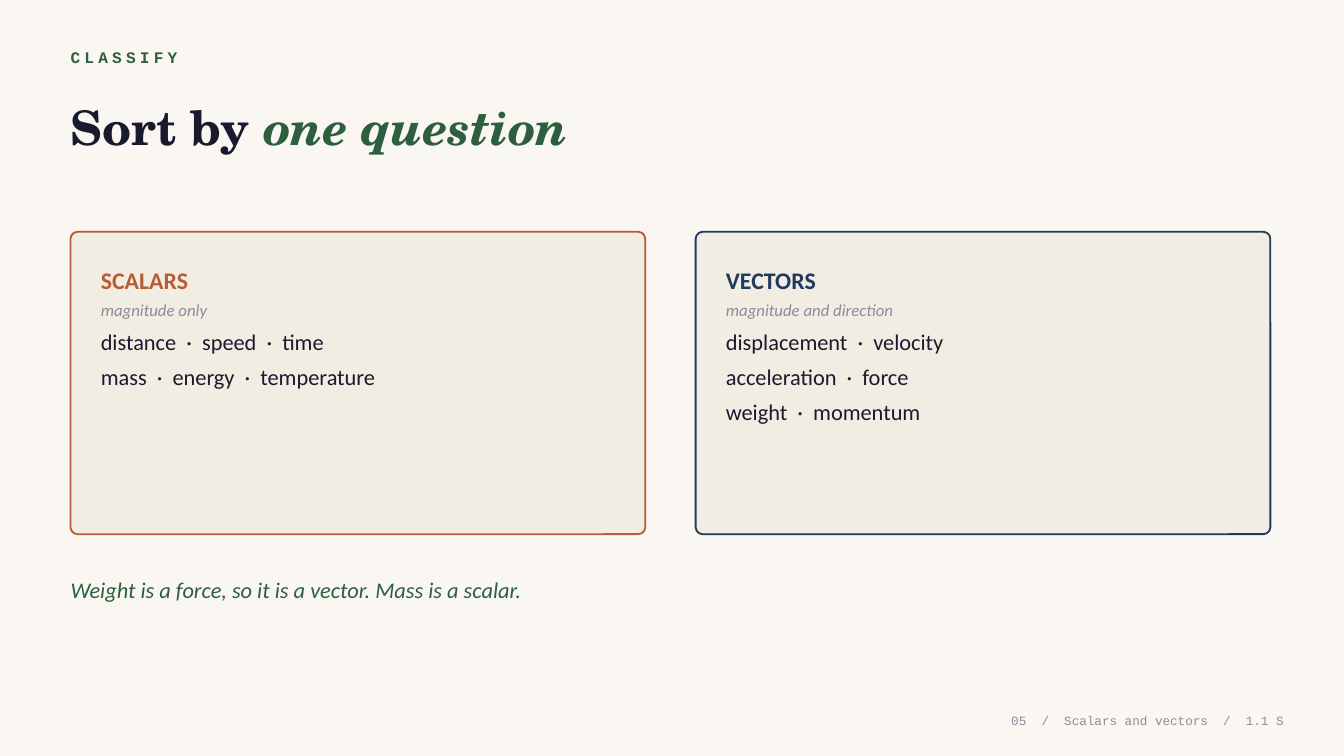
from pptx import Presentation
from pptx.dml.color import RGBColor
from pptx.enum.shapes import MSO_SHAPE
from pptx.enum.text import MSO_ANCHOR, PP_ALIGN
from pptx.util import Inches, Pt

INK, GREEN, RUST, NAVY = "1A1A2E", "2D5F3F", "B85C38", "1E3A5F"
GREY, PAPER, CREAM = "8B8B9C", "FAF7F2", "F2EDE3"
SANS, MONO, SERIF = "Calibri", "Courier New", "TeX Gyre Schola"
LEFT, WIDTH = 0.7, 11.93


def color(code):
    return RGBColor.from_string(code)


def style(run, size, face, code, bold=False, italic=False):
    font = run.font
    font.size, font.name = Pt(size), face
    font.bold, font.italic = bold, italic
    font.color.rgb = color(code)


def add_frame(slide, x, y, w, h, anchor=MSO_ANCHOR.MIDDLE):
    """Add a wrapping text box without margins and return its frame."""
    box = slide.shapes.add_textbox(Inches(x), Inches(y), Inches(w), Inches(h))
    frame = box.text_frame
    frame.word_wrap = True
    frame.vertical_anchor = anchor
    frame.margin_left = frame.margin_right = 0
    frame.margin_top = frame.margin_bottom = 0
    return frame


def add_line(slide, x, y, w, h, text, *look, **marks):
    """Add a single line of text and return its paragraph."""
    frame = add_frame(slide, x, y, w, h)
    frame.text = text
    para = frame.paragraphs[0]
    style(para.runs[0], *look, **marks)
    return para


def add_header(slide, x, y, w):
    label = add_line(slide, x, y, w, 0.3, "CLASSIFY", 11.5, MONO, GREEN, bold=True)
    label.runs[0].font._element.set("spc", "300")
    title = add_line(slide, x, y + 0.36, w, 0.95, "Sort by ", 34, SERIF, INK, bold=True)
    end = title.add_run()
    end.text = "one question"
    style(end, 34, SERIF, GREEN, bold=True, italic=True)


def add_card(slide, x, y, w, h, accent, head, note, rows):
    card = slide.shapes.add_shape(
        MSO_SHAPE.ROUNDED_RECTANGLE, Inches(x), Inches(y), Inches(w), Inches(h))
    card.adjustments[0] = 0.023
    card.shadow.inherit = False
    card.fill.solid()
    card.fill.fore_color.rgb = color(CREAM)
    card.line.color.rgb = color(accent)
    card.line.width = Pt(1.3)

    frame = add_frame(slide, x + 0.3, y + 0.25, w - 0.6, h - 0.5, MSO_ANCHOR.TOP)
    frame.text = "\n".join([head, note, *rows])
    for para in frame.paragraphs:
        para.line_spacing = 1.3
    first, second, *rest = frame.paragraphs
    style(first.runs[0], 17, SANS, accent, bold=True)
    style(second.runs[0], 12, SANS, GREY, italic=True)
    for para in rest:
        style(para.runs[0], 16, SANS, INK)


def add_cards(slide, x, y, w, h, gap):
    cards = [
        (RUST, "SCALARS", "magnitude only",
         ["distance  ·  speed  ·  time", "mass  ·  energy  ·  temperature"]),
        (NAVY, "VECTORS", "magnitude and direction",
         ["displacement  ·  velocity", "acceleration  ·  force",
          "weight  ·  momentum"]),
    ]
    for i, card in enumerate(cards):
        add_card(slide, x + i * (w + gap), y, w, h, *card)


def add_footer(slide, x, y, w, h):
    para = add_line(slide, x, y, w, h, "05  /  Scalars and vectors  /  1.1 S",
                    9, MONO, GREY)
    para.alignment = PP_ALIGN.RIGHT


def main():
    deck = Presentation()
    deck.slide_width, deck.slide_height = Inches(13.33), Inches(7.5)
    slide = deck.slides.add_slide(deck.slide_layouts[6])
    slide.background.fill.solid()
    slide.background.fill.fore_color.rgb = color(PAPER)

    add_header(slide, LEFT, 0.42, WIDTH)
    add_cards(slide, LEFT, 2.3, 5.7, 3, 0.5)
    add_line(slide, LEFT, 5.6, WIDTH, 0.5,
             "Weight is a force, so it is a vector. Mass is a scalar.",
             16, SANS, GREEN, italic=True)
    add_footer(slide, 8.93, 7, 3.8, 0.3)
    deck.save("out.pptx")


if __name__ == "__main__":
    main()
